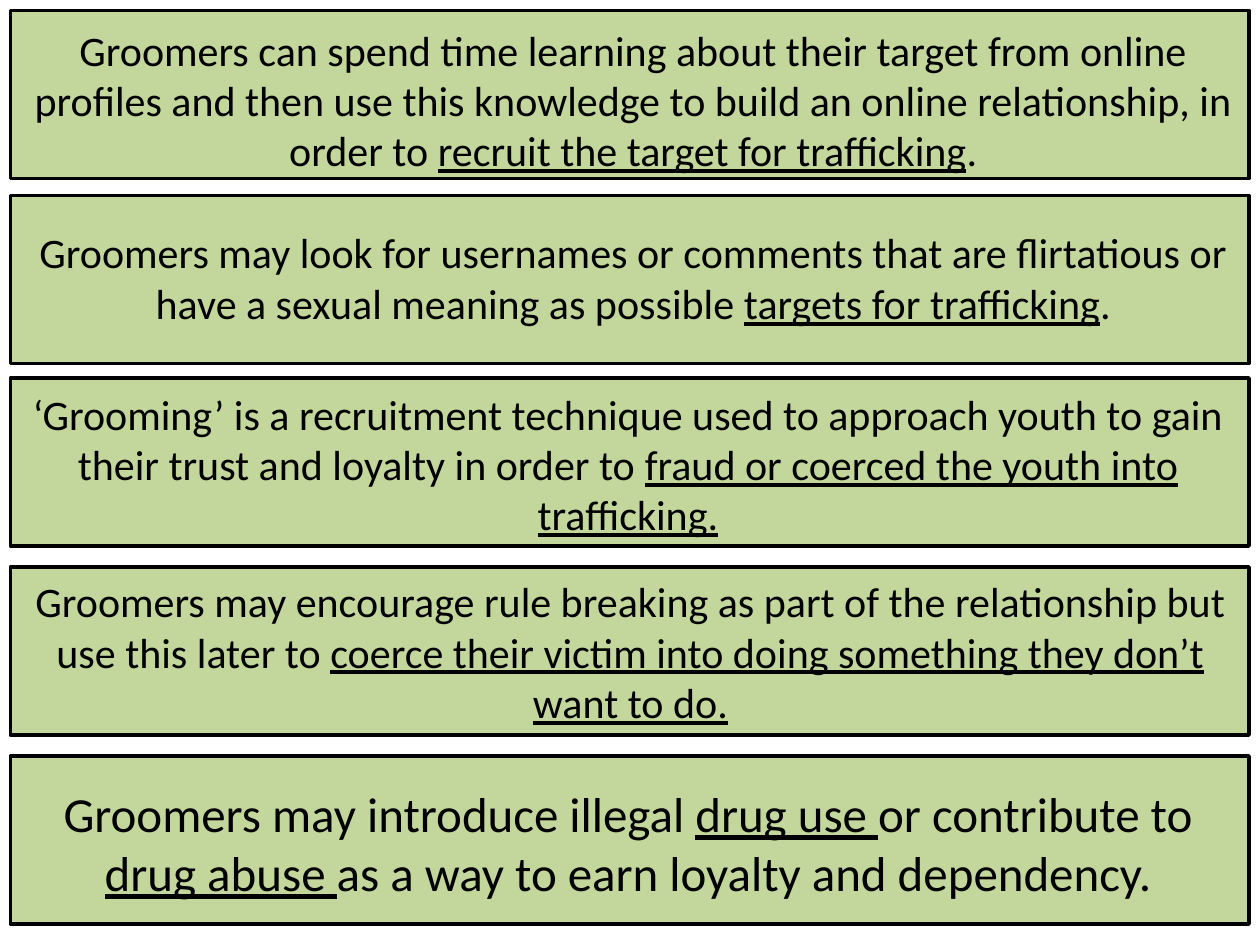
"""Build a slide of five statements on how groomers recruit their targets."""
from pptx import Presentation
from pptx.dml.color import RGBColor
from pptx.enum.shapes import MSO_SHAPE as Shape
from pptx.enum.text import MSO_AUTO_SIZE as AutoSize, PP_ALIGN as Align
from pptx.util import Cm, Pt


def paint(colour_format, value):
    colour_format.rgb = RGBColor.from_string(value)


GREEN, BLACK = "C3D69B", "000000"
PANEL_TOPS = [0.21, 3.94, 7.62, 11.43, 15.24]
STATEMENTS = [
    ((0.33, 0.36, 24.87, 3.33), 24, [
        ("Groomers can spend time learning about their target from online profiles "
         "and then use this knowledge to build an online relationship, in order to ", False),
        ("recruit the target for trafficking", True),
        (".", False)]),
    ((0.33, 4.45, 24.87, 2.31), 24, [
        ("Groomers may look for usernames or comments that are flirtatious "
         "or have a sexual meaning as possible ", False),
        ("targets for trafficking", True),
        (".", False)]),
    ((0.33, 7.7, 24.66, 3.33), 24, [
        ("‘Grooming’ is a recruitment technique used to approach youth "
         "to gain their trust and loyalty in order to ", False),
        ("fraud or coerced the youth into trafficking.", True)]),
    ((0.38, 11.48, 24.66, 3.33), 24, [
        ("Groomers may encourage rule breaking as part of the relationship "
         "but use this later to ", False),
        ("coerce their victim into doing something they don’t want to do.", True)]),
    ((0.33, 15.67, 24.66, 2.64), 28, [
        ("Groomers may introduce illegal ", False),
        ("drug use ", True),
        ("or contribute to ", False),
        ("drug abuse ", True),
        ("as a way to earn loyalty and dependency.", False)]),
]

deck = Presentation()
deck.slide_width, deck.slide_height = Cm(25.4), Cm(19.05)
slide = deck.slides.add_slide(deck.slide_layouts[6])

for top in PANEL_TOPS:
    panel = slide.shapes.add_shape(Shape.RECTANGLE, Cm(0.21), Cm(top), Cm(24.97), Cm(3.39))
    panel.shadow.inherit = False
    panel.fill.solid()
    paint(panel.fill.fore_color, GREEN)
    paint(panel.line.color, BLACK)
    panel.line.width = Pt(2)

for bounds, size, phrases in STATEMENTS:
    statement = slide.shapes.add_textbox(*map(Cm, bounds)).text_frame
    statement.word_wrap = True
    statement.auto_size = AutoSize.SHAPE_TO_FIT_TEXT
    sentence = statement.paragraphs[0]
    sentence.alignment = Align.CENTER
    for words, underlined in phrases:
        phrase = sentence.add_run()
        phrase.text = words
        phrase.font.name = "Calibri"
        phrase.font.size = Pt(size)
        phrase.font.underline = underlined
        paint(phrase.font.color, BLACK)

deck.save("out.pptx")
